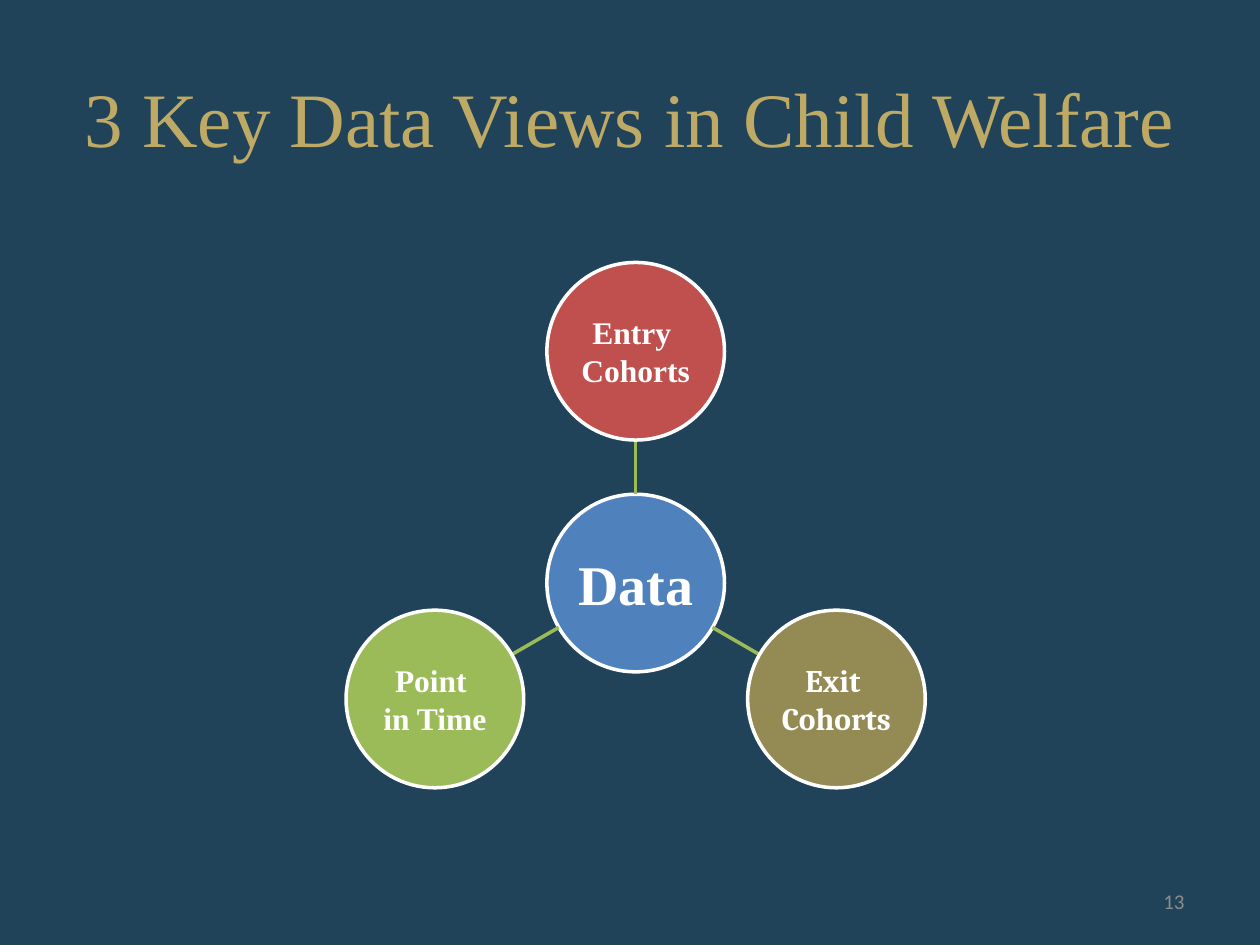
import math
from pptx import Presentation
from pptx import util as u
from pptx.dml.color import RGBColor
from pptx.enum import shapes, text
from pptx.oxml.ns import qn
from lxml import etree

WIDE, HIGH = 10, 7.5
MID = (0.5045 * WIDE, 0.617 * HIGH)
SIZE, REACH = 1.41, 1.84
SERIF = "Times New Roman"
HUES = {
    "back": "204359", "title": "BEAA64", "white": "FFFFFF", "link": "9BBB59",
    "data": "4F81BD", "entry": "C0504D", "exit": "948A54", "point": "9BBB59",
    "page": "8C8C8C",
}
VIEWS = [
    ("Entry \nCohorts", "entry", SERIF, -90),
    ("Exit \nCohorts", "exit", "Cambria", 30),
    ("Point \nin Time", "point", SERIF, 150),
]


def hue(name):
    return RGBColor.from_string(HUES[name])


def spot(turn, far):
    rad = math.radians(turn)
    return MID[0] + far * math.cos(rad), MID[1] + far * math.sin(rad)


def write(shape, words, size, font, color, side, bold=False, inset=None):
    frame = shape.text_frame
    frame.word_wrap = True
    frame.vertical_anchor = text.MSO_ANCHOR.MIDDLE
    if inset is not None:
        frame.margin_left = frame.margin_right = u.Inches(inset)
        frame.margin_top = frame.margin_bottom = u.Inches(inset)
    frame.text = words
    for para in frame.paragraphs:
        para.alignment = side
        for run in para.runs:
            run.font.size = u.Pt(size)
            run.font.name = font
            run.font.bold = bold
            run.font.color.rgb = hue(color)


def label(slide, box, *style):
    shape = slide.shapes.add_textbox(*map(u.Inches, box))
    write(shape, *style)


def disc(slide, center, fill, words, size, font, inset):
    left, top = (u.Inches(c - SIZE / 2) for c in center)
    shape = slide.shapes.add_shape(
        shapes.MSO_SHAPE.OVAL, left, top, u.Inches(SIZE), u.Inches(SIZE))
    shape.shadow.inherit = False
    shape.fill.solid()
    shape.fill.fore_color.rgb = hue(fill)
    shape.line.color.rgb = hue("white")
    shape.line.width = u.Pt(2)
    write(shape, words, size, font, "white", text.PP_ALIGN.CENTER, True, inset)


def link(slide, turn):
    ends = spot(turn, SIZE / 2) + spot(turn, REACH - SIZE / 2)
    line = slide.shapes.add_connector(
        shapes.MSO_CONNECTOR.STRAIGHT, *map(u.Inches, ends))
    line.line.color.rgb = hue("link")
    line.line.width = u.Pt(2)
    etree.SubElement(line._element.spPr, qn("a:effectLst"))


def main():
    deck = Presentation()
    deck.slide_width, deck.slide_height = u.Inches(WIDE), u.Inches(HIGH)
    slide = deck.slides.add_slide(deck.slide_layouts[6])
    slide.background.fill.solid()
    slide.background.fill.fore_color.rgb = hue("back")

    label(slide, (0.05 * WIDE, 0.04 * HIGH, 0.9 * WIDE, 1.25),
          "3 Key Data Views in Child Welfare", 44, SERIF, "title",
          text.PP_ALIGN.CENTER)
    disc(slide, MID, "data", "Data", 32, SERIF, 0.02)
    for words, fill, font, turn in VIEWS:
        link(slide, turn)
        disc(slide, spot(turn, REACH), fill, words, 18, font, 0.01)
    label(slide, (7.17, 6.95, 2.33, 0.4), "13", 12, "Calibri", "page",
          text.PP_ALIGN.RIGHT)
    deck.save("out.pptx")


if __name__ == "__main__":
    main()
